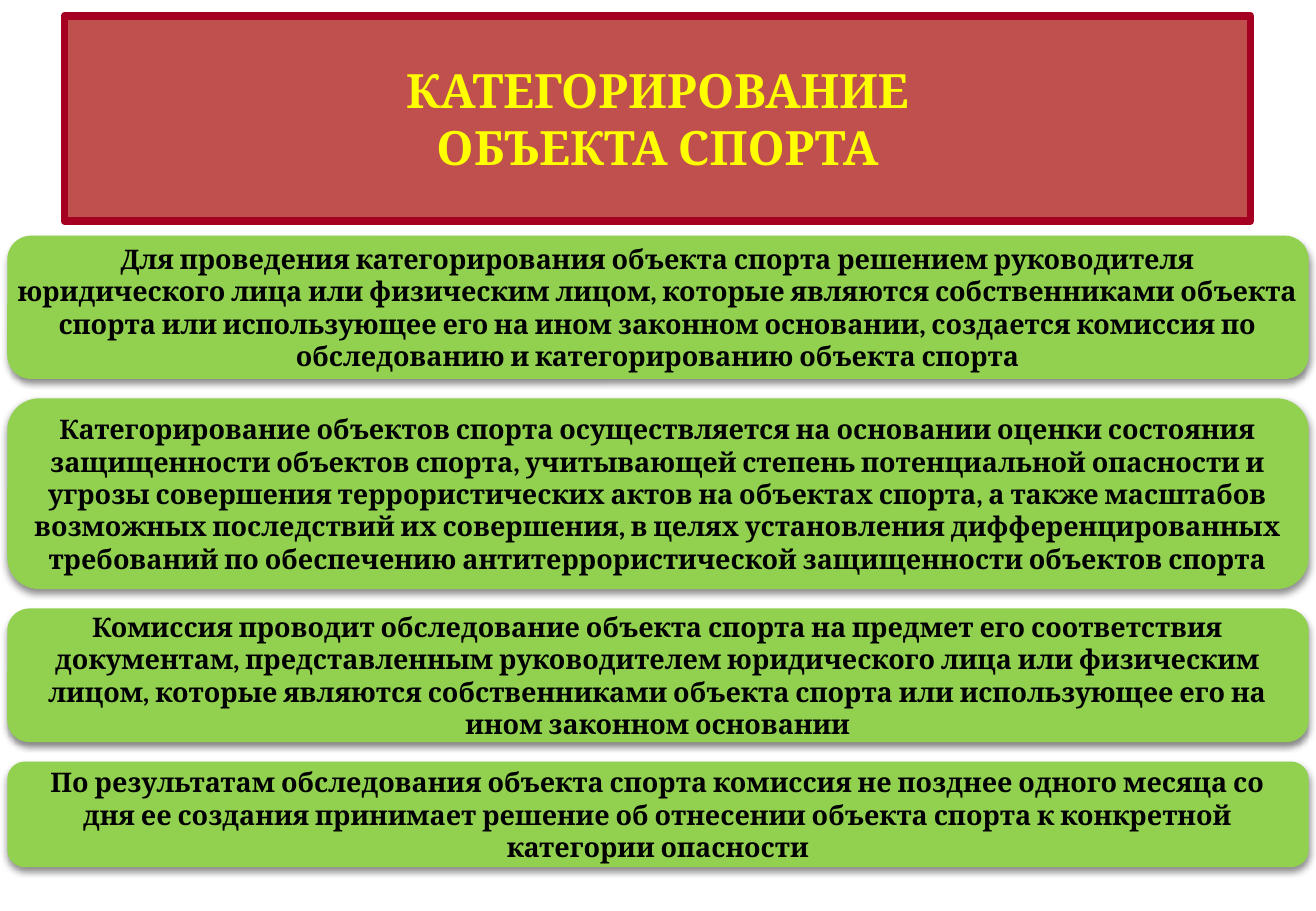
from dataclasses import dataclass

from lxml.etree import SubElement
from pptx import Presentation
from pptx.dml.color import RGBColor
from pptx.enum.shapes import MSO_SHAPE as Shape
from pptx.enum.text import MSO_ANCHOR, MSO_AUTO_SIZE, PP_ALIGN
from pptx.oxml.ns import qn
from pptx.util import Inches, Pt

COLORS = {
    "step": "92D050",
    "callout": "C0504D",
    "callout_line": "A50021",
    "title": "FFFF00",
    "text": "000000",
}
FONT = "Cambria"
STEP_LEFT, STEP_TOP, STEP_WIDTH, STEP_GAP = 0.06, 1.94, 10.71, 0.16
CALLOUT_RATIOS = {"adj1": 0.99, "adj2": 0.99, "adj3": 0.167, "adj4": 0.667}


@dataclass(frozen=True)
class Step:
    text: str
    height: float
    inset: float = 0


STEPS = [
    Step(
        "Для проведения категорирования объекта спорта решением руководителя "
        "юридического лица или физическим лицом, которые являются собственниками "
        "объекта спорта или использующее его на ином законном основании, создается "
        "комиссия по обследованию и категорированию объекта спорта",
        1.18,
    ),
    Step(
        "Категорирование объектов спорта осуществляется на основании оценки "
        "состояния защищенности объектов спорта, учитывающей степень потенциальной "
        "опасности и угрозы совершения террористических актов на объектах спорта, "
        "а также масштабов возможных последствий их совершения, в целях "
        "установления дифференцированных требований по обеспечению "
        "антитеррористической защищенности объектов спорта",
        1.57,
    ),
    Step(
        "Комиссия проводит обследование объекта спорта на предмет его соответствия "
        "документам, представленным руководителем юридического лица или физическим "
        "лицом, которые являются собственниками объекта спорта или использующее "
        "его на ином законном основании",
        1.1,
    ),
    Step(
        "По результатам обследования объекта спорта комиссия не позднее одного "
        "месяца со дня ее создания принимает решение об отнесении объекта спорта "
        "к конкретной категории опасности",
        0.87,
        inset=0.17,
    ),
]


def rgb(name: str) -> RGBColor:
    return RGBColor.from_string(COLORS[name])


def write_text(shape, *lines: str, size: float, color: str, inset: float,
               wrap: bool = True) -> None:
    frame = shape.text_frame
    frame.auto_size = MSO_AUTO_SIZE.NONE
    frame.word_wrap = wrap
    frame.vertical_anchor = MSO_ANCHOR.MIDDLE
    frame.margin_left = frame.margin_right = Inches(inset)
    frame.margin_top = frame.margin_bottom = Inches(min(inset, 0.17))
    for index, line in enumerate(lines):
        para = frame.add_paragraph() if index else frame.paragraphs[0]
        para.alignment = PP_ALIGN.CENTER
        span = para.add_run()
        span.text = line
        span.font.name = FONT
        span.font.size = Pt(size)
        span.font.bold = True
        span.font.color.rgb = rgb(color)


def add_soft_shadow(shape) -> None:
    shape.shadow.inherit = False
    effects = shape._element.spPr.find(qn("a:effectLst"))
    shadow = SubElement(effects, qn("a:outerShdw"), blurRad=str(Pt(4)),
                        dist=str(Pt(2)), dir="5400000", rotWithShape="0")
    color = SubElement(shadow, qn("a:srgbClr"), val="000000")
    SubElement(color, qn("a:alpha"), val="46000")


def format_title(title) -> None:
    """Turn the title placeholder into a callout with a down arrow."""
    title.left, title.top = Inches(0.53), Inches(0.13)
    title.width, title.height = Inches(9.76), Inches(1.69)
    geometry = SubElement(title._element.spPr, qn("a:prstGeom"),
                          prst="downArrowCallout")
    guides = SubElement(geometry, qn("a:avLst"))
    for name, ratio in CALLOUT_RATIOS.items():
        SubElement(guides, qn("a:gd"), name=name,
                   fmla=f"val {round(ratio * 100000)}")
    title.fill.solid()
    title.fill.fore_color.rgb = rgb("callout")
    title.line.color.rgb = rgb("callout_line")
    title.line.width = Pt(4.5)
    write_text(title, "КАТЕГОРИРОВАНИЕ", "ОБЪЕКТА СПОРТА",
               size=28, color="title", inset=0.05, wrap=False)


def add_step(page, step: Step, top: float) -> None:
    box = page.shapes.add_shape(
        Shape.ROUNDED_RECTANGLE, Inches(STEP_LEFT), Inches(top),
        Inches(STEP_WIDTH), Inches(step.height))
    box.fill.solid()
    box.fill.fore_color.rgb = rgb("step")
    box.line.fill.background()
    add_soft_shadow(box)
    write_text(box, step.text, size=16, color="text", inset=step.inset)


def main() -> None:
    deck = Presentation()
    deck.slide_width, deck.slide_height = Inches(10.83), Inches(7.5)
    page = deck.slides.add_slide(deck.slide_layouts.get_by_name("Title Only"))
    format_title(page.shapes.title)
    top = STEP_TOP
    for step in STEPS:
        add_step(page, step, top)
        top += step.height + STEP_GAP
    deck.save("out.pptx")


if __name__ == "__main__":
    main()
